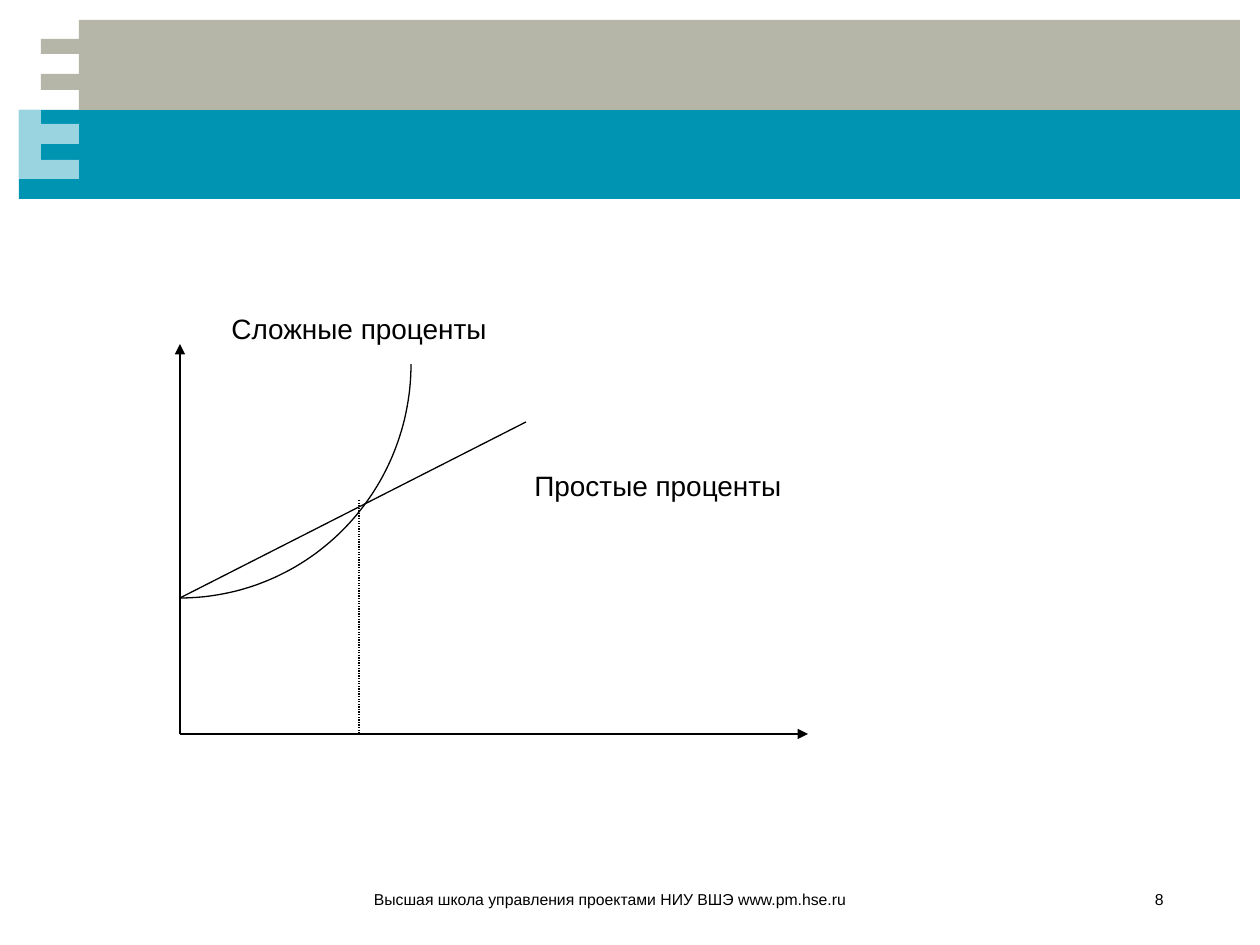
from math import cos, pi, sin

from lxml.etree import SubElement
from pptx import Presentation
from pptx.dml.color import RGBColor
from pptx.enum.dml import MSO_LINE
from pptx.enum.shapes import MSO_CONNECTOR, MSO_SHAPE
from pptx.enum.text import MSO_ANCHOR, PP_ALIGN
from pptx.oxml.ns import qn
from pptx.util import Emu, Pt

SCALE = 914400 / 126  # EMU per px
BLACK = RGBColor(0x00, 0x00, 0x00)
WHITE = RGBColor(0xFF, 0xFF, 0xFF)
TEAL = RGBColor(0x00, 0x94, 0xB3)
GREY = RGBColor(0xB5, 0xB5, 0xA8)
FONT = "Arial"

# Content: lengths in px
TEAL_BAND = (19, 110, 1221, 89)
GREY_COMB = [(79, 20), (1240, 20), (1240, 110), (79, 110), (79, 90), (41, 90),
             (41, 74), (79, 74), (79, 54), (41, 54), (41, 39), (79, 39)]
PALE_COMB = [(79, 179), (79, 160), (41, 160), (41, 144), (79, 144), (79, 124),
             (41, 124), (41, 110), (19, 110), (19, 179)]

ORIGIN_X, ORIGIN_Y = 180, 734
START_Y = 598  # where both interest lines begin
CROSSING_X = 359
LINES = [  # start, end, has arrowhead, is dotted
    ((ORIGIN_X, ORIGIN_Y), (ORIGIN_X, 344), True, False),
    ((ORIGIN_X, ORIGIN_Y), (808, ORIGIN_Y), True, False),
    ((ORIGIN_X, START_Y), (526, 422), False, False),
    ((CROSSING_X, 500), (CROSSING_X, ORIGIN_Y), False, True),
]
CURVE_WIDTH, CURVE_HEIGHT = 231, 234
CURVE_STEPS = 60
LABELS = [
    ("Простые проценты", (522, 462, 307, 78)),
    ("Сложные проценты", (219, 305, 362, 58)),
]
FOOTERS = [
    ("8", (1116, 890, 60, 19)),
    ("Высшая школа управления проектами НИУ ВШЭ www.pm.hse.ru",
     (144, 890, 714, 19)),
]


def px(*lengths):
    return [Emu(round(length * SCALE)) for length in lengths]


def add_outline(slide, points, close=True):
    # Finer units than px keep the curve smooth
    units = [(round(x * 100), round(y * 100)) for x, y in points]
    builder = slide.shapes.build_freeform(*units[0], scale=SCALE / 100)
    builder.add_line_segments(units[1:], close=close)
    shape = builder.convert_to_shape()
    shape.shadow.inherit = False
    return shape


def paint(shape, fill, line=None):
    shape.fill.solid()
    shape.fill.fore_color.rgb = fill
    if line is None:
        shape.line.fill.background()
    else:
        set_line(shape, line)


def set_line(shape, color):
    shape.line.color.rgb = color
    shape.line.width = Pt(0.75)


def add_rectangle(slide, box, fill, line=None):
    shape = slide.shapes.add_shape(MSO_SHAPE.RECTANGLE, *px(*box))
    shape.shadow.inherit = False
    paint(shape, fill, line)
    return shape


def add_line(slide, start, end, arrow, dotted):
    connector = slide.shapes.add_connector(
        MSO_CONNECTOR.STRAIGHT, *px(*start, *end))
    set_line(connector, BLACK)
    if dotted:
        connector.line.dash_style = MSO_LINE.ROUND_DOT
    if arrow:
        SubElement(connector.line._get_or_add_ln(), qn("a:tailEnd"),
                   type="triangle")
    SubElement(connector._element.spPr, qn("a:effectLst"))


def write(shape, text, size, alignment, anchor):
    frame = shape.text_frame
    frame.word_wrap = True
    frame.vertical_anchor = anchor
    frame.text = text
    paragraph = frame.paragraphs[0]
    paragraph.alignment = alignment
    font = paragraph.runs[0].font
    font.name, font.size, font.color.rgb = FONT, Pt(size), BLACK


def main():
    presentation = Presentation()
    presentation.slide_width, presentation.slide_height = px(1260, 945)
    slide = presentation.slides.add_slide(presentation.slide_layouts[6])

    # Header bands
    add_rectangle(slide, TEAL_BAND, TEAL)
    paint(add_outline(slide, GREY_COMB), GREY)
    pale_comb = add_outline(slide, PALE_COMB)
    paint(pale_comb, WHITE)
    color = pale_comb._element.spPr.find(".//" + qn("a:srgbClr"))
    SubElement(color, qn("a:alpha"), val="60000")

    # Axes, simple interest and crossing mark
    for line in LINES:
        add_line(slide, *line)

    # Compound interest: a quarter ellipse
    angles = [step / CURVE_STEPS * pi / 2 for step in range(CURVE_STEPS + 1)]
    curve = add_outline(
        slide,
        [(ORIGIN_X + CURVE_WIDTH * sin(angle),
          START_Y - CURVE_HEIGHT * (1 - cos(angle))) for angle in angles],
        close=False)
    curve.fill.background()
    set_line(curve, BLACK)

    # Labels
    for text, box in LABELS:
        label = add_rectangle(slide, box, WHITE, WHITE)
        write(label, text, 16, PP_ALIGN.LEFT, MSO_ANCHOR.TOP)

    # Footer and slide number
    for text, box in FOOTERS:
        footer = slide.shapes.add_textbox(*px(*box))
        footer.text_frame.margin_top = footer.text_frame.margin_bottom = 0
        write(footer, text, 9, PP_ALIGN.RIGHT, MSO_ANCHOR.MIDDLE)

    presentation.save("out.pptx")


if __name__ == "__main__":
    main()
